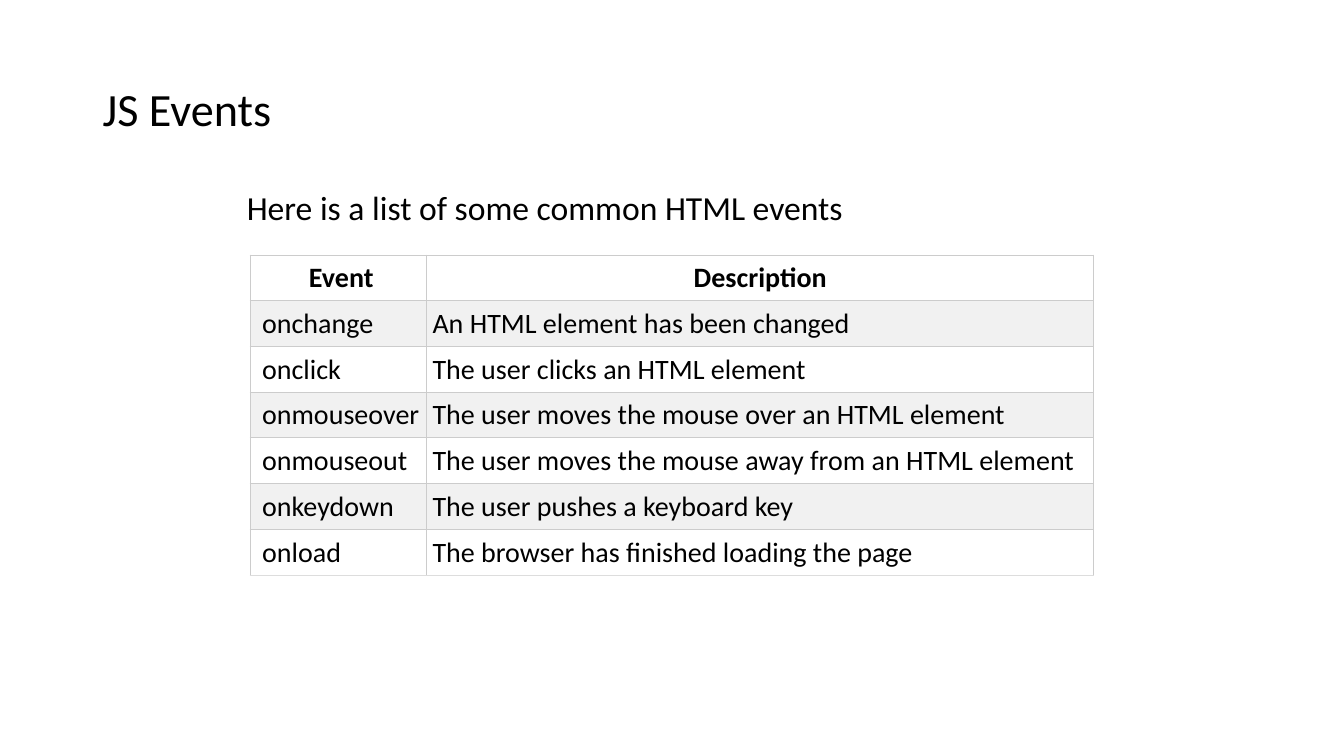
import lxml.etree
import pptx
import pptx.dml.color
import pptx.enum.text
import pptx.oxml.ns
import pptx.util

Inches = pptx.util.Inches
ALIGN = pptx.enum.text.PP_ALIGN
ANCHOR = pptx.enum.text.MSO_ANCHOR

EVENTS = [
    ("Event", "Description"),
    ("onchange", "An HTML element has been changed"),
    ("onclick", "The user clicks an HTML element"),
    ("onmouseover", "The user moves the mouse over an HTML element"),
    ("onmouseout", "The user moves the mouse away from an HTML element"),
    ("onkeydown", "The user pushes a keyboard key"),
    ("onload", "The browser has finished loading the page"),
]


def color(value):
    return pptx.dml.color.RGBColor.from_string(value)


class SlideBuilder:
    font_name = "Calibri"
    text_color = "000000"
    stripe_colors = ("FFFFFF", "F1F1F1")
    border_color = "CCCCCC"
    bottom_color = "DDDDDD"
    border_width = pptx.util.Pt(0.75)
    cell_margin = Inches(0.06)

    def __init__(self, slide):
        self.slide = slide

    def format_runs(self, paragraph, size, bold=False):
        for run in paragraph.runs:
            run.font.name = self.font_name
            run.font.size = pptx.util.Pt(size)
            run.font.bold = bold
            run.font.color.rgb = color(self.text_color)

    def text(self, text, left, top, width, height, size, anchor=ANCHOR.TOP):
        shape = self.slide.shapes.add_textbox(
            Inches(left), Inches(top), Inches(width), Inches(height))
        frame = shape.text_frame
        frame.word_wrap = True
        frame.vertical_anchor = anchor
        frame.text = text
        paragraph = frame.paragraphs[0]
        paragraph.line_spacing = 0.9
        self.format_runs(paragraph, size)

    def border(self, cell, side, line_color):
        """Draw one side of a cell: L, R, T or B."""
        properties = cell._tc.get_or_add_tcPr()
        qn = pptx.oxml.ns.qn
        line = lxml.etree.SubElement(
            properties, qn("a:ln" + side), w=str(self.border_width))
        fill = lxml.etree.SubElement(line, qn("a:solidFill"))
        lxml.etree.SubElement(fill, qn("a:srgbClr"), val=line_color)

    def cell(self, cell, text, fill, left_margin, bottom_color, header):
        cell.margin_left = left_margin
        cell.margin_right = cell.margin_top = cell.margin_bottom = self.cell_margin
        for side in "LRT":
            self.border(cell, side, self.border_color)
        self.border(cell, "B", bottom_color)
        cell.fill.solid()
        cell.fill.fore_color.rgb = color(fill)
        cell.text_frame.text = text
        paragraph = cell.text_frame.paragraphs[0]
        paragraph.alignment = ALIGN.CENTER if header else ALIGN.LEFT
        self.format_runs(paragraph, 20, bold=header)

    def table(self, rows, left, top, column_widths, row_height):
        """Add a striped table whose first row is the header."""
        table = self.slide.shapes.add_table(
            len(rows), len(column_widths), Inches(left), Inches(top),
            Inches(sum(column_widths)), Inches(row_height * len(rows))).table
        for column, width in zip(table.columns, column_widths):
            column.width = Inches(width)
        for row_index, row in enumerate(rows):
            fill = self.stripe_colors[row_index % 2]
            last = row_index == len(rows) - 1
            bottom_color = self.bottom_color if last else self.border_color
            for column_index, text in enumerate(row):
                left_margin = self.cell_margin * (2 if column_index == 0 else 1)
                self.cell(table.cell(row_index, column_index), text, fill,
                          left_margin, bottom_color, header=row_index == 0)


def main():
    presentation = pptx.Presentation()
    presentation.slide_width = Inches(13.33)
    presentation.slide_height = Inches(7.5)
    builder = SlideBuilder(
        presentation.slides.add_slide(presentation.slide_layouts[6]))
    builder.text("JS Events", 0.92, 0.38, 11.5, 1.45, 33, ANCHOR.MIDDLE)
    builder.text("Here is a list of some common HTML events",
                 2.35, 1.85, 9.13, 4.53, 24)
    builder.table(EVENTS, 2.48, 2.53, (1.75, 6.62), 0.45)
    presentation.save("out.pptx")


if __name__ == "__main__":
    main()
